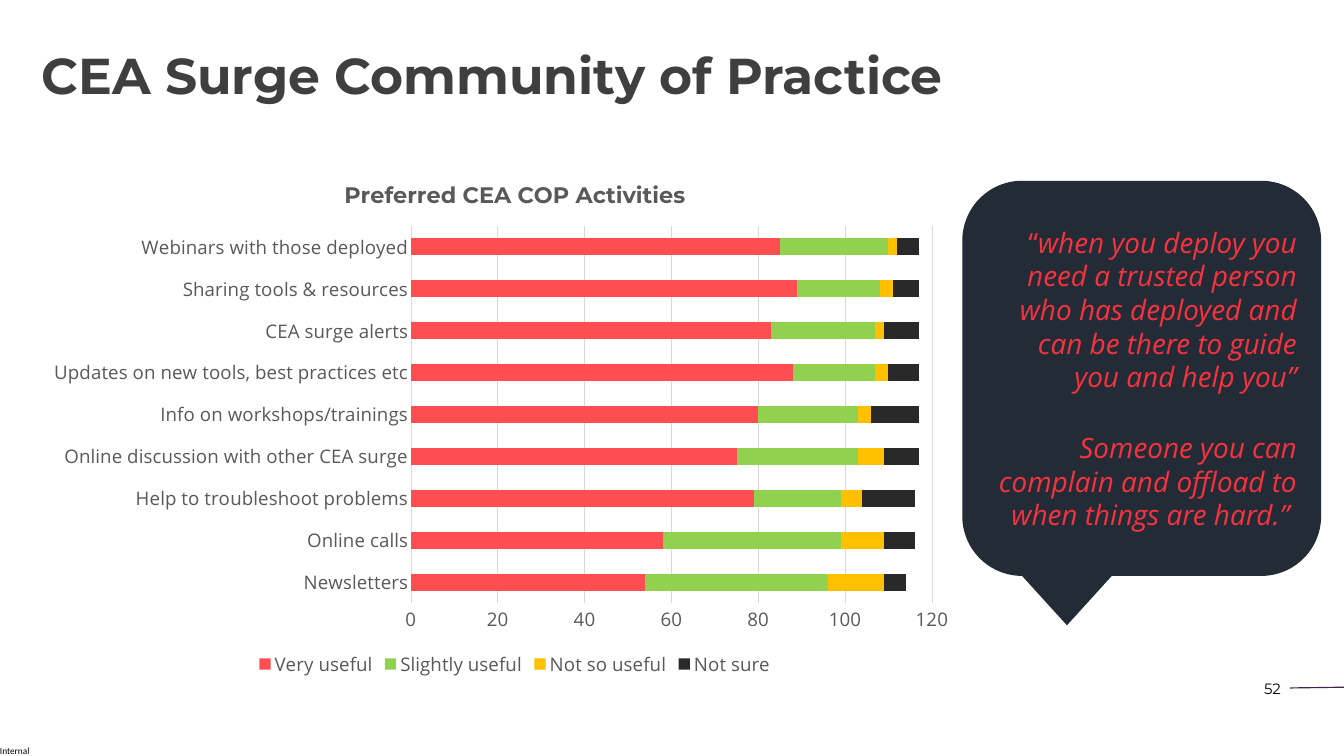
from lxml import etree
from pptx import Presentation
from pptx.chart.data import CategoryChartData
from pptx.dml.color import RGBColor
from pptx.enum.chart import XL_CHART_TYPE, XL_LEGEND_POSITION, XL_TICK_MARK
from pptx.enum.shapes import MSO_CONNECTOR, MSO_SHAPE
from pptx.enum.text import MSO_ANCHOR, MSO_AUTO_SIZE, PP_ALIGN
from pptx.oxml.ns import qn
from pptx.util import Inches, Pt

BAR = XL_CHART_TYPE.BAR_STACKED
BOTTOM = XL_LEGEND_POSITION.BOTTOM
NONE = XL_TICK_MARK.NONE
STRAIGHT = MSO_CONNECTOR.STRAIGHT
BUBBLE = MSO_SHAPE.ROUNDED_RECTANGULAR_CALLOUT
MIDDLE = MSO_ANCHOR.MIDDLE
FIT = MSO_AUTO_SIZE.TEXT_TO_FIT_SHAPE
LEFT, RIGHT = PP_ALIGN.LEFT, PP_ALIGN.RIGHT

WIDE, HIGH = 20, 11.25
HEAD, BODY, SMALL = "Montserrat", "Open Sans", "Calibri"
HUE = {
    "title": "3F3F3F", "grey": "595959", "grid": "D9D9D9", "black": "000000",
    "rule": "452250", "navy": "232B36", "quote": "F5333F",
}
TITLE = "CEA Surge Community of Practice"
CAPTION = "Preferred CEA COP Activities"
ROWS = [
    ("Newsletters", 54, 42, 13, 5),
    ("Online calls", 58, 41, 10, 7),
    ("Help to troubleshoot problems", 79, 20, 5, 12),
    ("Online discussion with other CEA surge", 75, 28, 6, 8),
    ("Info on workshops/trainings", 80, 23, 3, 11),
    ("Updates on new tools, best practices etc", 88, 19, 3, 7),
    ("CEA surge alerts", 83, 24, 2, 8),
    ("Sharing tools & resources", 89, 19, 3, 6),
    ("Webinars with those deployed", 85, 25, 2, 5),
]
SERIES = [
    ("Very useful", "FF4E51"), ("Slightly useful", "92D050"),
    ("Not so useful", "FFC000"), ("Not sure", "292929"),
]
QUOTES = [
    [("“", False), ("when you deploy you need a trusted person who has deployed "
                    "and can be there to guide you and help you”", True)],
    [("Someone you can complain and offload to when things are hard.” ", True)],
]


def rgb(name):
    return RGBColor.from_string(HUE.get(name, name))


def style(font, face, size, hue, bold=False):
    font.name, font.size, font.bold = face, Pt(size), bold
    font.color.rgb = rgb(hue)


def label(slide, box, text, face, size, hue, bold=False, align=LEFT, pad=True):
    frame = slide.shapes.add_textbox(*map(Inches, box)).text_frame
    frame.word_wrap = True
    if not pad:
        frame.margin_left = frame.margin_right = 0
        frame.margin_top = frame.margin_bottom = 0
    para = frame.paragraphs[0]
    para.text, para.alignment = text, align
    style(para.font, face, size, hue, bold)
    return para


def draw_rule(slide, ends):
    rule = slide.shapes.add_connector(STRAIGHT, *map(Inches, ends))
    rule.line.color.rgb, rule.line.width = rgb("rule"), Pt(1.25)
    etree.SubElement(rule._element.spPr, qn("a:effectLst"))


def draw_chart(slide, box):
    data = CategoryChartData()
    names, *cols = zip(*ROWS)
    data.categories = names
    for (name, _), vals in zip(SERIES, cols):
        data.add_series(name, vals)
    chart = slide.shapes.add_chart(BAR, *map(Inches, box), data).chart
    style(chart.font, BODY, 20, "grey")

    chart.has_title = True
    para = chart.chart_title.text_frame.paragraphs[0]
    para.text = CAPTION
    style(para.font, HEAD, 24, "grey", True)
    chart.chart_title.include_in_layout = False

    chart.has_legend = True
    chart.legend.position = BOTTOM
    chart.legend.include_in_layout = False
    style(chart.legend.font, BODY, 20, "grey")

    plot = chart.plots[0]
    plot.gap_width, plot.overlap, plot.vary_by_categories = 150, 100, False
    for bar, (_, hue) in zip(plot.series, SERIES):
        bar.format.fill.solid()
        bar.format.fill.fore_color.rgb = rgb(hue)

    cat, val = chart.category_axis, chart.value_axis
    for axis in (cat, val):
        axis.major_tick_mark = axis.minor_tick_mark = NONE
        style(axis.tick_labels.font, BODY, 20, "grey")
    val.minimum_scale, val.maximum_scale, val.major_unit = 0, 130, 20
    val.format.line.fill.background()
    for line in (cat.format.line, val.major_gridlines.format.line):
        line.color.rgb, line.width = rgb("grid"), Pt(0.75)


def draw_quote(slide, box):
    shape = slide.shapes.add_shape(BUBBLE, *map(Inches, box))
    shape.shadow.inherit = False
    shape.fill.solid()
    shape.fill.fore_color.rgb = rgb("navy")
    shape.line.fill.background()
    frame = shape.text_frame
    frame.word_wrap, frame.auto_size = True, FIT
    frame.vertical_anchor = MIDDLE
    for i, runs in enumerate(QUOTES):
        para = frame.add_paragraph() if i else frame.paragraphs[0]
        para.alignment = RIGHT
        para.space_before = Pt(40 * i)
        style(para.font, BODY, 30, "quote")
        for text, slant in runs:
            run = para.add_run()
            run.text, run.font.italic = text, slant


def main():
    deck = Presentation()
    deck.slide_width, deck.slide_height = Inches(WIDE), Inches(HIGH)
    slide = deck.slides.add_slide(deck.slide_layouts[6])
    edge = 0.026 * WIDE
    draw_rule(slide, (0.96 * WIDE, 0.91 * HIGH, WIDE, 0.909 * HIGH))
    label(slide, (0.922 * WIDE, 0.894 * HIGH, 0.72, 0.37), "52",
          HEAD, 16, "black", align=RIGHT)
    label(slide, (0, 0.986 * HIGH, 0.47, 0.17), "Internal",
          SMALL, 10, "black", pad=False)
    title = label(slide, (edge, 0.07 * HIGH, 15.49, 0.83), TITLE,
                  HEAD, 54, "title", True)
    title.line_spacing = 0.8
    draw_chart(slide, (edge, 2.39, 14.28, 7.74))
    draw_quote(slide, (0.716 * WIDE, 2.69, 5.34, 5.88))
    deck.save("out.pptx")


if __name__ == "__main__":
    main()
